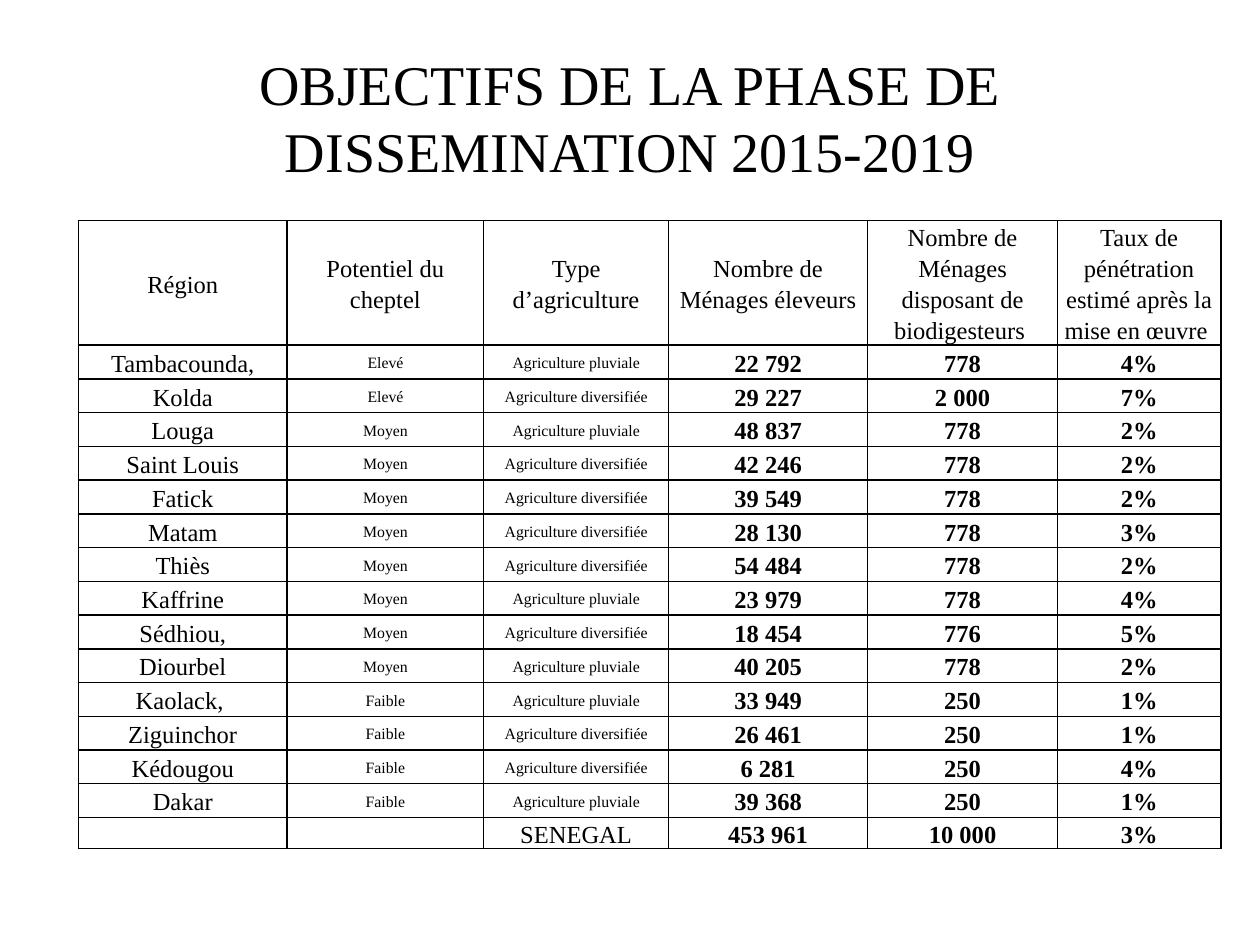
from lxml import etree
from pptx import Presentation
from pptx.dml.color import RGBColor
from pptx.enum.text import MSO_ANCHOR, PP_ALIGN
from pptx.oxml.ns import qn
from pptx.util import Cm, Pt

CENTER = PP_ALIGN.CENTER
MIDDLE = MSO_ANCHOR.MIDDLE
TITLE_ONLY = 5

COLORS = {"text": "000000", "border": "000000"}
FONT = "Times New Roman"
BODY_SIZE = 14
DETAIL_SIZE = 9

HEADERS = [
    "Région",
    "Potentiel du cheptel",
    "Type d’agriculture",
    "Nombre de Ménages éleveurs",
    "Nombre de Ménages disposant de biodigesteurs ",
    "Taux de pénétration estimé après la mise en œuvre ",
]
RAINFED = "Agriculture pluviale"
DIVERSIFIED = "Agriculture diversifiée"
REGIONS = [
    ("Tambacounda,", "Elevé", RAINFED, "22 792", "778", "4%"),
    ("Kolda", "Elevé", DIVERSIFIED, "29 227", "2 000", "7%"),
    ("Louga", "Moyen", RAINFED, "48 837", "778", "2%"),
    ("Saint Louis", "Moyen", DIVERSIFIED, "42 246", "778", "2%"),
    ("Fatick", "Moyen", DIVERSIFIED, "39 549", "778", "2%"),
    ("Matam", "Moyen", DIVERSIFIED, "28 130", "778", "3%"),
    ("Thiès", "Moyen", DIVERSIFIED, "54 484", "778", "2%"),
    ("Kaffrine", "Moyen", RAINFED, "23 979", "778", "4%"),
    ("Sédhiou,", "Moyen", DIVERSIFIED, "18 454", "776", "5%"),
    ("Diourbel", "Moyen", RAINFED, "40 205", "778", "2%"),
    ("Kaolack, ", "Faible", RAINFED, "33 949", "250", "1%"),
    ("Ziguinchor", "Faible", DIVERSIFIED, "26 461", "250", "1%"),
    ("Kédougou", "Faible", DIVERSIFIED, "6 281", "250", "4%"),
    ("Dakar", "Faible", RAINFED, "39 368", "250", "1%"),
]
TOTAL = ("", "", "SENEGAL", "453 961", "10 000", "3%")

COLUMN_WIDTHS = [4.21, 3.96, 3.73, 4.01, 3.83, 3.29]
ROW_HEIGHTS = [2.39] + [0.68] * len(REGIONS) + [0.62]
DETAIL_COLUMNS = (1, 2)
FIRST_FIGURE_COLUMN = 3


def format_paragraph(paragraph, size, bold=False):
    paragraph.alignment = CENTER
    for run in paragraph.runs:
        run.font.name = FONT
        run.font.size = Pt(size)
        run.font.bold = bold
        run.font.color.rgb = RGBColor.from_string(COLORS["text"])


def add_title(slide, text):
    title = slide.shapes.title
    title.left, title.top = Cm(1.27), Cm(0.76)
    title.width, title.height = Cm(22.86), Cm(3.18)
    title.text_frame.text = text
    title.text_frame.vertical_anchor = MIDDLE
    format_paragraph(title.text_frame.paragraphs[0], 32)


def add_borders(cell):
    properties = cell._tc.get_or_add_tcPr()
    for position, side in enumerate(("a:lnL", "a:lnR", "a:lnT", "a:lnB")):
        line = etree.Element(qn(side), w=str(Pt(1)))
        fill = etree.SubElement(line, qn("a:solidFill"))
        etree.SubElement(fill, qn("a:srgbClr"), val=COLORS["border"])
        properties.insert(position, line)


def fill_cell(cell, text, size, bold):
    cell.fill.background()
    add_borders(cell)
    cell.vertical_anchor = MIDDLE
    cell.margin_left = cell.margin_right = Cm(0.08)
    cell.margin_top = cell.margin_bottom = 0
    paragraph = cell.text_frame.paragraphs[0]
    if text:
        paragraph.text = text
        paragraph.line_spacing = 1.15
    else:
        # An empty cell must not stretch its row with the default text size.
        etree.SubElement(paragraph._p, qn("a:endParaRPr"), sz=str(DETAIL_SIZE * 100))
    format_paragraph(paragraph, size, bold)


def add_region_table(slide):
    rows = [HEADERS, *REGIONS, TOTAL]
    frame = slide.shapes.add_table(
        len(rows), len(HEADERS), Cm(1.58), Cm(4.45),
        Cm(sum(COLUMN_WIDTHS)), Cm(sum(ROW_HEIGHTS)),
    )
    table = frame.table
    table.first_row = table.horz_banding = False
    for column, width in zip(table.columns, COLUMN_WIDTHS):
        column.width = Cm(width)
    for row, height in zip(table.rows, ROW_HEIGHTS):
        row.height = Cm(height)

    for r, values in enumerate(rows):
        for c, text in enumerate(values):
            is_detail = values in REGIONS and c in DETAIL_COLUMNS
            is_figure = r > 0 and c >= FIRST_FIGURE_COLUMN
            size = DETAIL_SIZE if is_detail else BODY_SIZE
            fill_cell(table.cell(r, c), text, size, is_figure)


def main():
    presentation = Presentation()
    presentation.slide_width, presentation.slide_height = Cm(25.4), Cm(19.05)
    slide = presentation.slides.add_slide(presentation.slide_layouts[TITLE_ONLY])
    add_title(slide, "OBJECTIFS DE LA PHASE DE DISSEMINATION 2015-2019")
    add_region_table(slide)
    presentation.save("out.pptx")


if __name__ == "__main__":
    main()
